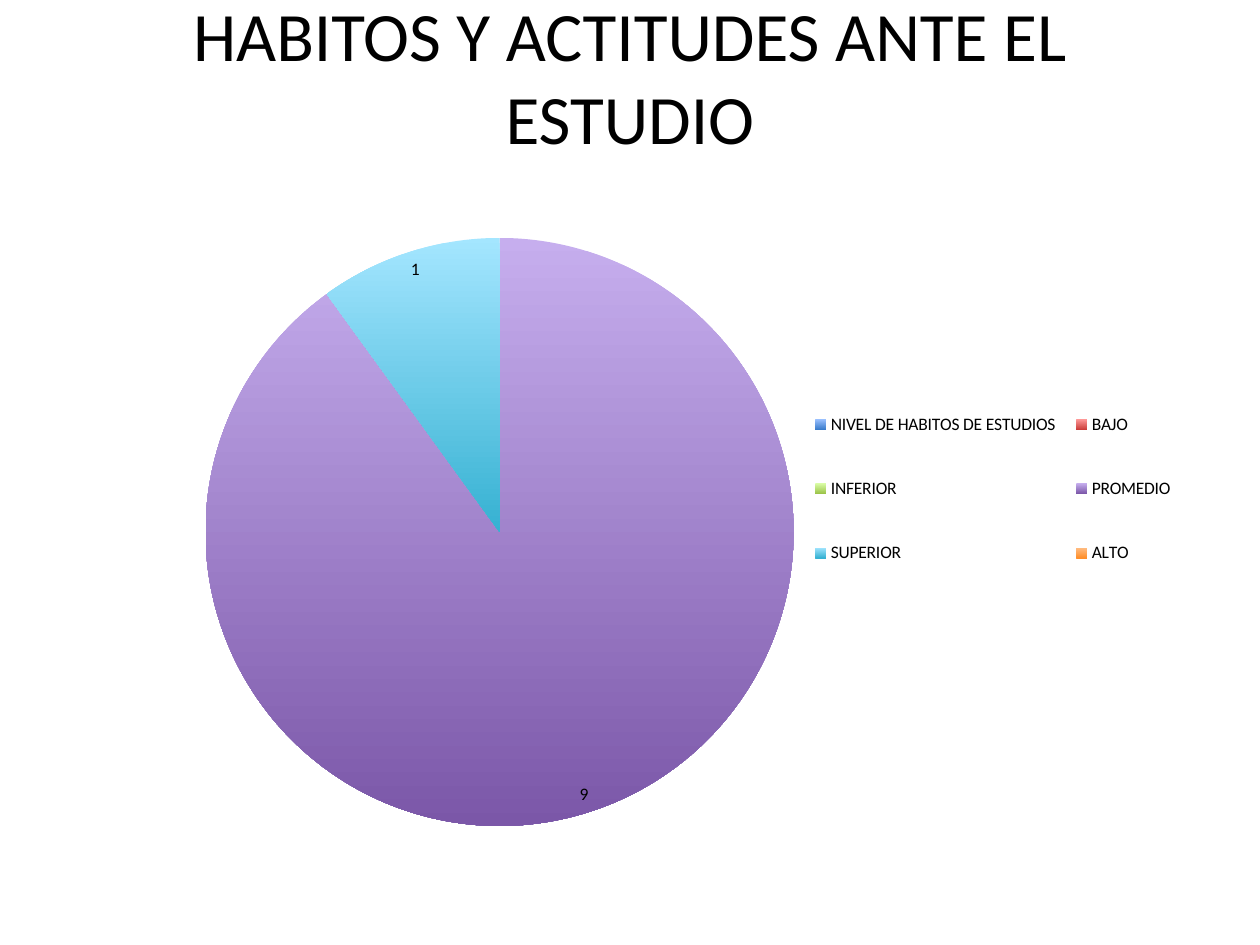
from lxml import etree
from pptx import Presentation
from pptx.chart.data import CategoryChartData
from pptx.dml.color import RGBColor
from pptx.enum.chart import XL_CHART_TYPE, XL_LABEL_POSITION, XL_LEGEND_POSITION
from pptx.enum.text import MSO_ANCHOR, PP_ALIGN
from pptx.oxml.ns import qn
from pptx.util import Inches, Pt

PIE = XL_CHART_TYPE.PIE
INSIDE = XL_LABEL_POSITION.INSIDE_END
RIGHT = XL_LEGEND_POSITION.RIGHT
MIDDLE = MSO_ANCHOR.MIDDLE
CENTER = PP_ALIGN.CENTER

COLORS = {
    "text": "000000",
    "blue top": "9BC1FF", "blue base": "3A7CCB",
    "red top": "FF9A99", "red base": "CB3D3A",
    "green top": "DAFDA7", "green base": "9BC348",
    "purple top": "C6AEEE", "purple base": "7B57A8",
    "cyan top": "A4E6FF", "cyan base": "36B1D2",
    "orange top": "FFBE86", "orange base": "FF8F2A",
}
LEVELS = [
    ("NIVEL DE HABITOS DE ESTUDIOS", None, "blue"),
    ("BAJO", None, "red"),
    ("INFERIOR", None, "green"),
    ("PROMEDIO", 9, "purple"),
    ("SUPERIOR", 1, "cyan"),
    ("ALTO", None, "orange"),
]


def tint(name):
    return RGBColor.from_string(COLORS[name])


def assign(item, values):
    for key, value in values.items():
        setattr(item, key, value)


def layout(x, y, w, h, inner=False):
    """Return a manual chart layout, in fractions of the chart's size."""
    root = etree.Element(qn("c:layout"))
    manual = etree.SubElement(root, qn("c:manualLayout"))
    parts = [("layoutTarget", "inner")] if inner else []
    parts += [("xMode", "edge"), ("yMode", "edge"),
              ("x", x), ("y", y), ("w", w), ("h", h)]
    for tag, value in parts:
        etree.SubElement(manual, qn(f"c:{tag}")).set("val", str(value))
    return root


class Deck:
    font = "Calibri"

    def __init__(self, slide):
        self.slide = slide

    def style(self, font, size):
        assign(font, {"name": self.font, "size": Pt(size)})
        font.color.rgb = tint("text")

    def title(self, text, box, size):
        frame = self.slide.shapes.add_textbox(*map(Inches, box)).text_frame
        # The deep bottom inset lifts the title above the middle of its box.
        assign(frame, {"word_wrap": True, "vertical_anchor": MIDDLE,
                       "margin_bottom": Inches(0.71)})
        line = frame.paragraphs[0]
        assign(line, {"text": text, "alignment": CENTER})
        self.style(line.runs[0].font, size)

    def pie(self, levels, box, size):
        names, values, hues = zip(*levels)
        data = CategoryChartData()
        data.categories = names
        data.add_series("Series 1", values)
        frame = self.slide.shapes.add_chart(PIE, *map(Inches, box), data)
        chart = frame.chart
        assign(chart, {"has_title": False, "has_legend": True})
        self.style(chart.font, size)
        plot = chart.plots[0]
        assign(plot, {"vary_by_categories": True, "has_data_labels": True})
        assign(plot.data_labels, {"show_value": True, "show_percentage": False,
                                  "position": INSIDE})
        for index, hue in enumerate(hues):
            self.shade(plot.series[0].points[index].format.fill, hue)
        self.place(chart)

    def shade(self, fill, hue):
        fill.gradient()
        fill.gradient_angle = 270
        for stop, end in zip(fill.gradient_stops, ("top", "base")):
            stop.color.rgb = tint(f"{hue} {end}")

    def place(self, chart):
        """Fix the places of the pie and its two-column legend."""
        area = chart.plots[0]._element.getparent()
        for old in area.findall(qn("c:layout")):
            area.remove(old)
        area.insert(0, layout(0.125, 0.028, 0.52, 0.943, inner=True))
        legend = chart.legend
        assign(legend, {"position": RIGHT, "include_in_layout": False})
        key = legend._element
        for old in key.findall(qn("c:layout")):
            key.remove(old)
        key.find(qn("c:legendPos")).addnext(layout(0.65, 0.24, 0.34, 0.38))


def main():
    prs = Presentation()
    assign(prs, {"slide_width": Inches(10), "slide_height": Inches(7.5)})
    deck = Deck(prs.slides.add_slide(prs.slide_layouts[6]))
    deck.title("HABITOS Y ACTITUDES ANTE EL ESTUDIO", (0.5, 0.3, 9, 1.25), 39.6)
    deck.pie(LEVELS, (0.5, 1.75, 9, 4.95), 10)
    prs.save("out.pptx")


if __name__ == "__main__":
    main()
